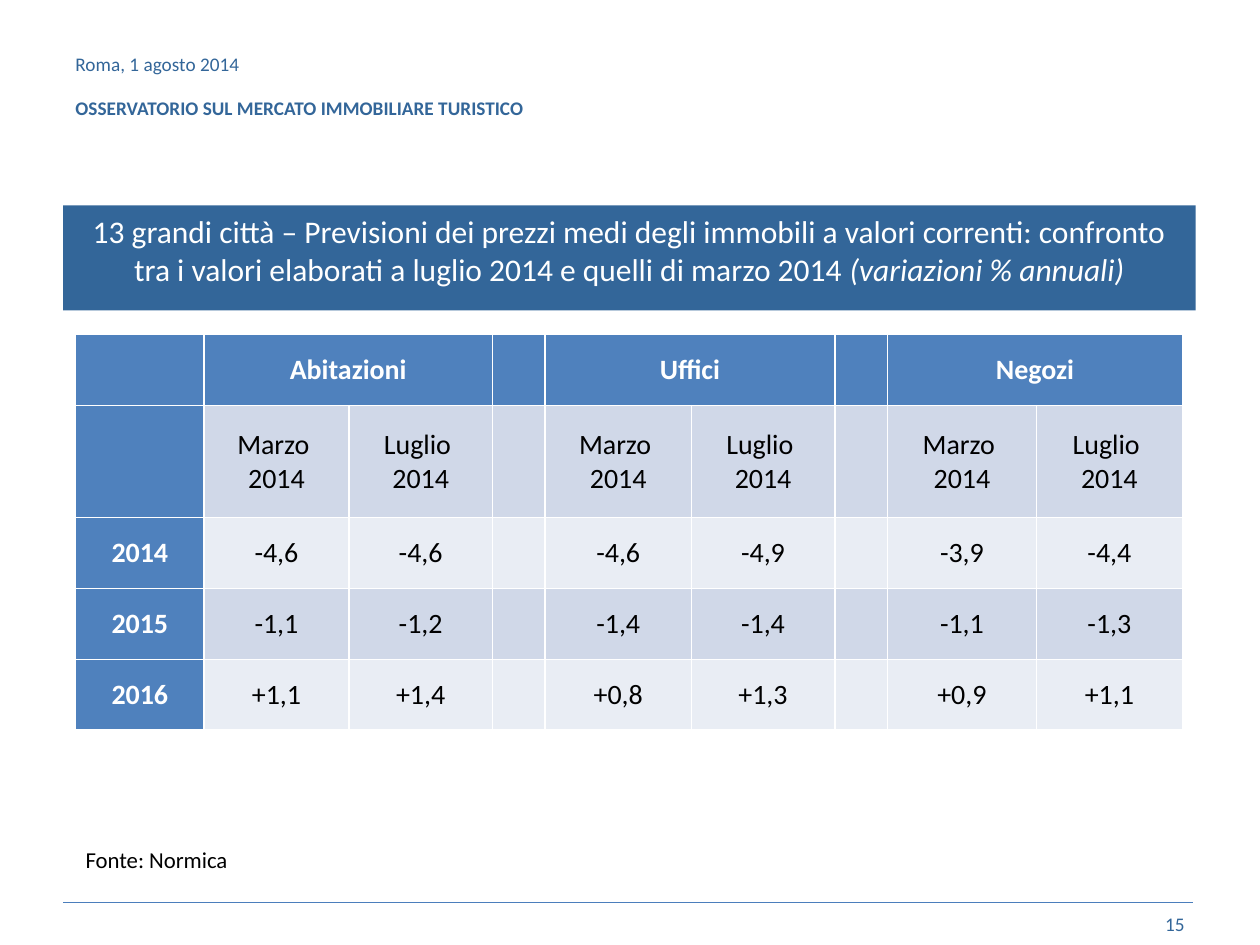
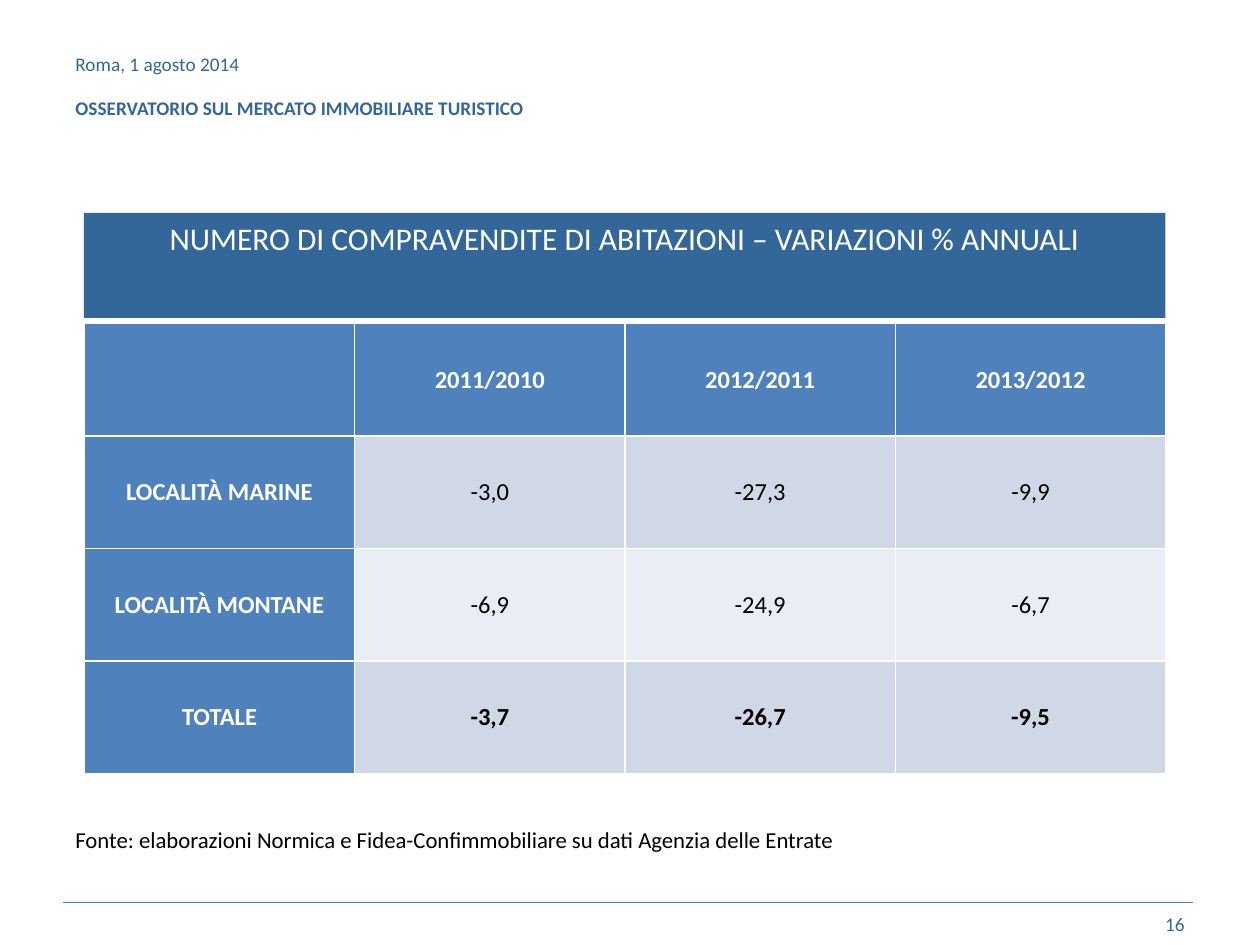
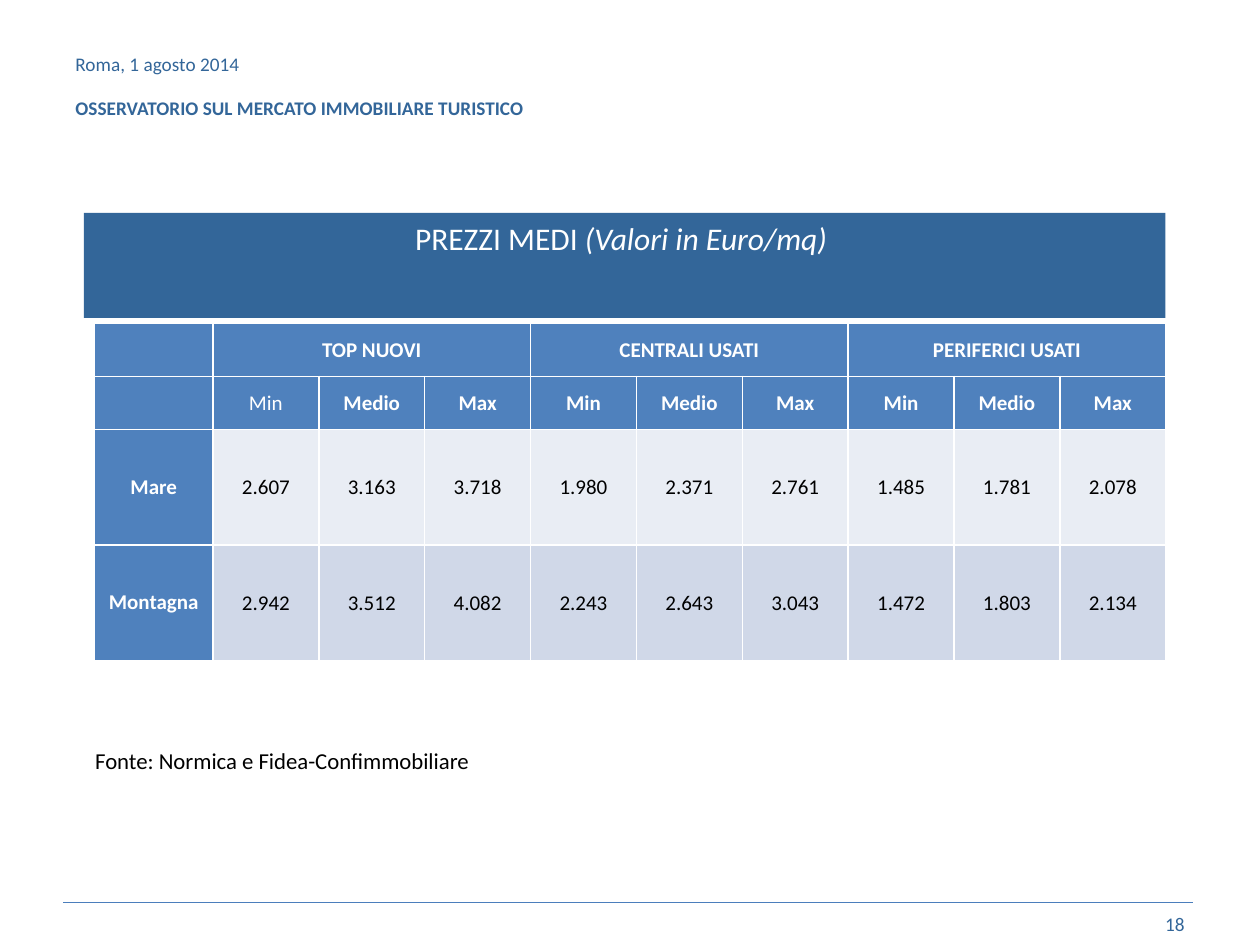
"""Build three slides of tables on Italian property prices and sales."""
from lxml.etree import SubElement
from pptx import Presentation
from pptx.dml.color import RGBColor
from pptx.enum.shapes import MSO_CONNECTOR
from pptx.enum.text import MSO_ANCHOR, MSO_AUTO_SIZE, PP_ALIGN
from pptx.oxml.ns import qn
from pptx.util import Pt

FONT = "Calibri"
BLUE = RGBColor(0x33, 0x66, 0x99)
RULE = RGBColor(0x4B, 0x7E, 0xBC)
HEAD = RGBColor(0x4F, 0x81, 0xBD)
BANDS = [RGBColor(0xE9, 0xED, 0xF4), RGBColor(0xD0, 0xD8, 0xE8)]
WHITE = RGBColor(0xFF, 0xFF, 0xFF)
BLACK = RGBColor(0, 0, 0)

SLIDES = [
    {
        "number": "15",
        "title": "13 grandi città – Previsioni dei prezzi medi degli immobili a valori "
                 "correnti: confronto tra i valori elaborati a luglio 2014 e quelli di marzo 2014 ",
        "italic": "(variazioni % annuali)",
        "band": (36, 117.4, 647.3, 51),
        "source": "Fonte: Normica",
        "source_at": (41.8, 479.5),
        "table_at": (43.2, 190.8),
        "cols": [73.4, 82.8, 82, 30.2, 83.5, 82, 30.2, 85, 83.5],
        "row_heights": [41, 64, 40.5, 40.5, 40.5],
        "size": 16, "head_rows": 1, "margins": (5, 0), "spans": [(1, 2), (4, 5), (7, 8)],
        "rows": [
            ["", "Abitazioni", "", "", "Uffici", "", "", "Negozi", ""],
            ["", "Marzo \n2014", "Luglio \n2014", "", "Marzo \n2014", "Luglio \n2014", "",
             "Marzo \n2014", "Luglio \n2014"],
            ["2014", "-4,6", "-4,6", "", "-4,6", "-4,9", "", "-3,9", "-4,4"],
            ["2015", "-1,1", "-1,2", "", "-1,4", "-1,4", "", "-1,1", "-1,3"],
            ["2016", "+1,1", "+1,4", "", "+0,8", "+1,3", "", "+0,9", "+1,1"],
        ],
    },
    {
        "number": "16",
        "title": "NUMERO DI COMPRAVENDITE DI ABITAZIONI – VARIAZIONI % ANNUALI",
        "italic": "",
        "band": (48, 121.7, 618, 29),
        "source": "Fonte: elaborazioni Normica e Fidea-Confimmobiliare su dati Agenzia delle Entrate",
        "source_at": (36, 468.5),
        "table_at": (48.2, 184.8),
        "cols": [154.5] * 4,
        "row_heights": [64.3] * 4,
        "size": 14, "head_rows": 1, "margins": (5, 0), "spans": [],
        "rows": [
            ["", "2011/2010", "2012/2011", "2013/2012"],
            ["LOCALITÀ MARINE", "-3,0", "-27,3", "-9,9"],
            ["LOCALITÀ MONTANE", "-6,9", "-24,9", "-6,7"],
            ["TOTALE", "-3,7", "-26,7", "-9,5"],
        ],
    },
    {
        "number": "18",
        "title": "PREZZI MEDI ",
        "italic": "(Valori in Euro/mq) ",
        "band": (48, 121.7, 618, 29),
        "source": "Fonte: Normica e Fidea-Confimmobiliare",
        "source_at": (47.3, 423.4),
        "table_at": (54, 184.8),
        "cols": [67.7] + [60.5] * 9,
        "row_heights": [30.3, 30.3, 66, 66],
        "size": 12, "head_rows": 2, "margins": (0.7, 0.7), "spans": [(1, 3), (4, 6), (7, 9)],
        "rows": [
            ["", "TOP NUOVI", "", "", "CENTRALI USATI", "", "", "PERIFERICI USATI", "", ""],
            [""] + ["Min", "Medio", "Max"] * 3,
            ["Mare", "2.607", "3.163", "3.718", "1.980", "2.371", "2.761",
             "1.485", "1.781", "2.078"],
            ["Montagna", "2.942", "3.512", "4.082", "2.243", "2.643", "3.043",
             "1.472", "1.803", "2.134"],
        ],
    },
]


def style(tf, size, color, align, bold=False):
    for p in tf.paragraphs:
        p.alignment = align
        for r in p.runs:
            r.font.name, r.font.size, r.font.bold = FONT, Pt(size), bold
            r.font.color.rgb = color


def add_text(s, box, text, size, color, align, anchor):
    tf = s.shapes.add_textbox(*map(Pt, box)).text_frame
    tf.word_wrap = True
    tf.vertical_anchor = anchor
    tf.text = text
    style(tf, size, color, align)
    return tf


prs = Presentation()
prs.slide_width, prs.slide_height = Pt(720), Pt(540)

for data in SLIDES:
    s = prs.slides.add_slide(prs.slide_layouts[5])

    rule = s.shapes.add_connector(MSO_CONNECTOR.STRAIGHT, Pt(36), Pt(515.5), Pt(682), Pt(515.5))
    rule.line.color.rgb = RULE
    rule.line.width = Pt(0.25)
    SubElement(rule._element.spPr, qn("a:effectLst"))

    tf = add_text(s, (36, 21.6, 533.5, 55.4),
                  "Roma, 1 agosto 2014\nOSSERVATORIO SUL MERCATO IMMOBILIARE TURISTICO",
                  11, BLUE, PP_ALIGN.LEFT, MSO_ANCHOR.MIDDLE)
    tf.paragraphs[1].space_before = Pt(12)
    tf.paragraphs[1].runs[0].font.bold = True
    add_text(s, (516.2, 513.4, 167.8, 28.8), data["number"],
             11, BLUE, PP_ALIGN.RIGHT, MSO_ANCHOR.MIDDLE)

    title = s.shapes.title
    title.left, title.top, title.width, title.height = map(Pt, data["band"])
    title.fill.solid()
    title.fill.fore_color.rgb = BLUE
    tf = title.text_frame
    tf.text = data["title"]
    tf.vertical_anchor = MSO_ANCHOR.TOP
    tf.auto_size = MSO_AUTO_SIZE.SHAPE_TO_FIT_TEXT
    if data["italic"]:
        r = tf.paragraphs[0].add_run()
        r.text = data["italic"]
        r.font.italic = True
    style(tf, 18, WHITE, PP_ALIGN.CENTER)

    cols, heights = data["cols"], data["row_heights"]
    table = s.shapes.add_table(len(heights), len(cols), *map(Pt, data["table_at"]),
                               Pt(sum(cols)), Pt(sum(heights))).table
    table.first_col = True
    for column, width in zip(table.columns, cols):
        column.width = Pt(width)
    for row, height in zip(table.rows, heights):
        row.height = Pt(height)
    for first, last in data["spans"]:
        table.cell(0, first).merge(table.cell(0, last))

    for i, values in enumerate(data["rows"]):
        for j, value in enumerate(values):
            cell = table.cell(i, j)
            is_head = i < data["head_rows"] or j == 0
            cell.fill.solid()
            cell.fill.fore_color.rgb = HEAD if is_head else BANDS[i % 2]
            cell.vertical_anchor = MSO_ANCHOR.MIDDLE
            side, top = (5, 0) if j == 0 else data["margins"]
            cell.margin_left = cell.margin_right = Pt(side)
            cell.margin_top, cell.margin_bottom = Pt(top), Pt(0)
            if value:
                cell.text = value
                is_bold = (is_head or values[0] == "TOTALE") and (value, j) != ("Min", 1)
                style(cell.text_frame, data["size"], WHITE if is_head else BLACK,
                      PP_ALIGN.CENTER, is_bold)

    tf = add_text(s, (*data["source_at"], 630, 23), data["source"],
                  13, BLACK, PP_ALIGN.JUSTIFY, MSO_ANCHOR.TOP)
    tf.auto_size = MSO_AUTO_SIZE.SHAPE_TO_FIT_TEXT

prs.save("out.pptx")
